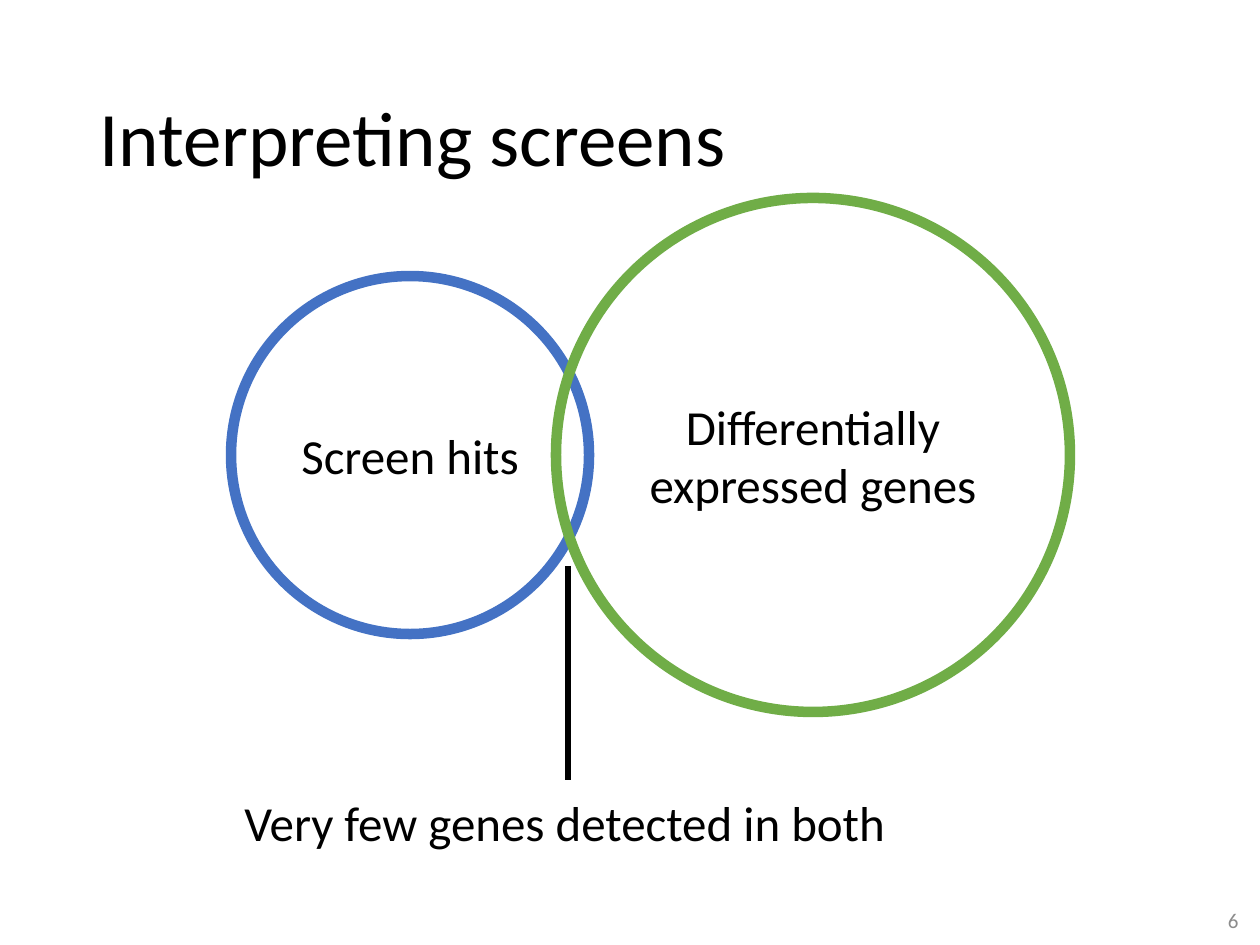
"""Build the "Interpreting screens" slide with two overlapping circles."""
from lxml.etree import SubElement
from pptx import Presentation
from pptx.dml.color import RGBColor
from pptx.enum.shapes import MSO_CONNECTOR, MSO_SHAPE
from pptx.enum.text import MSO_ANCHOR as ANCHOR, PP_ALIGN as ALIGN
from pptx.oxml.ns import qn
from pptx.util import Emu, Pt

PX = 914400 // 126
BLACK = RGBColor(0x00, 0x00, 0x00)
WHITE = RGBColor(0xFF, 0xFF, 0xFF)
BLUE = RGBColor(0x44, 0x72, 0xC4)
GREEN = RGBColor(0x70, 0xAD, 0x47)
GRAY = RGBColor(0x8C, 0x8C, 0x8C)


def px(*lengths):
    return [Emu(length * PX) for length in lengths]


def write(shape, text, size, color, align, anchor, wrap=True):
    frame = shape.text_frame
    frame.word_wrap = wrap
    frame.vertical_anchor = anchor
    paragraph = frame.paragraphs[0]
    paragraph.text = text
    paragraph.alignment = align
    paragraph.font.name = "Calibri"
    paragraph.font.size = Pt(size)
    paragraph.font.color.rgb = color
    return paragraph


presentation = Presentation()
presentation.slide_width, presentation.slide_height = px(1260, 945)
slide = presentation.slides.add_slide(presentation.slide_layouts[6])
shapes = slide.shapes

title = shapes.add_textbox(*px(87, 50, 1086, 183))
paragraph = write(title, "Interpreting screens", 44, BLACK, ALIGN.LEFT, ANCHOR.MIDDLE)
paragraph.line_spacing = 0.9

circles = [
    ("Screen hits", 231, 276, 358, BLUE, WHITE),
    ("Differentially expressed genes", 556, 198, 514, GREEN, None),
]
for text, left, top, diameter, line_color, fill_color in circles:
    circle = shapes.add_shape(MSO_SHAPE.OVAL, *px(left, top, diameter, diameter))
    circle.shadow.inherit = False
    if fill_color is None:
        circle.fill.background()
    else:
        circle.fill.solid()
        circle.fill.fore_color.rgb = fill_color
    circle.line.color.rgb = line_color
    circle.line.width = Pt(6)
    write(circle, text, 28, BLACK, ALIGN.CENTER, ANCHOR.MIDDLE)

overlap_label = shapes.add_textbox(*px(232, 786, 673, 72))
write(overlap_label, "Very few genes detected in both", 28, BLACK, ALIGN.LEFT, ANCHOR.TOP, wrap=False)

pointer = shapes.add_connector(MSO_CONNECTOR.STRAIGHT, *px(568, 566, 568, 780))
pointer.line.color.rgb = BLACK
pointer.line.width = Pt(3)
SubElement(pointer.element.spPr, qn("a:effectLst"))

slide_number = shapes.add_textbox(*px(968, 895, 283, 50))
write(slide_number, "6", 12, GRAY, ALIGN.RIGHT, ANCHOR.MIDDLE)

presentation.save("out.pptx")
